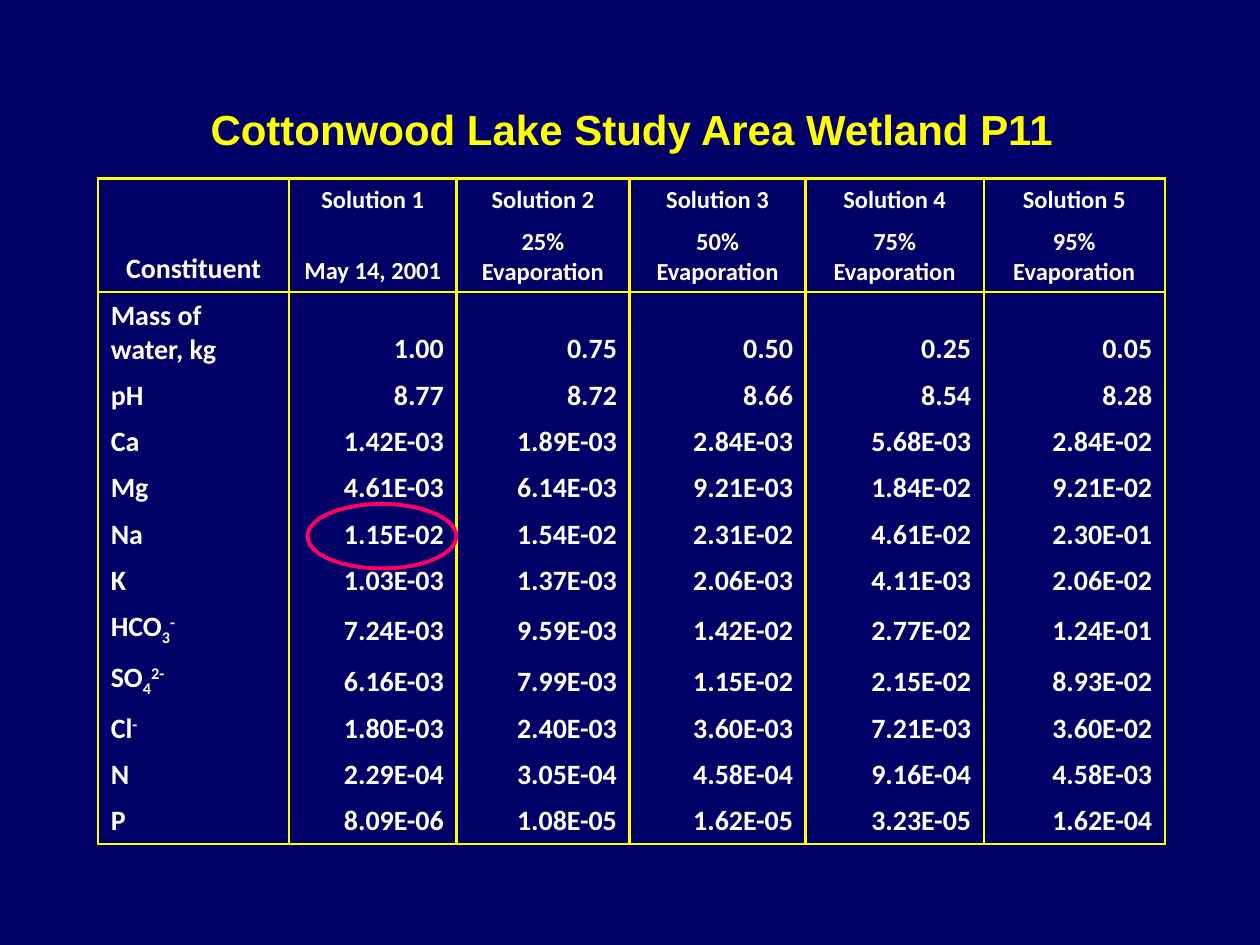
from dataclasses import dataclass

from lxml import etree
from pptx import Presentation
from pptx.dml.color import RGBColor
from pptx.enum.shapes import MSO_SHAPE
from pptx.enum.text import MSO_ANCHOR, MSO_AUTO_SIZE, PP_ALIGN
from pptx.oxml.ns import qn
from pptx.util import Cm, Pt

LEFT, CENTER, RIGHT = PP_ALIGN.LEFT, PP_ALIGN.CENTER, PP_ALIGN.RIGHT
TOP, BOTTOM = MSO_ANCHOR.TOP, MSO_ANCHOR.BOTTOM
FIT_SHAPE = MSO_AUTO_SIZE.SHAPE_TO_FIT_TEXT
OVAL = MSO_SHAPE.OVAL
TITLE_ONLY = 5
SUB, SUPER = -25000, 30000


@dataclass(frozen=True)
class Theme:
    background: str = "000066"
    accent: str = "FFFF00"
    text: str = "FFFFFF"
    highlight: str = "FF0066"
    title_font: str = "Arial"
    table_font: str = "Calibri"
    title_size: int = 24
    heading_size: int = 14
    body_size: int = 16
    frame_line: float = 1.5
    header_line: float = 1
    highlight_line: float = 2.25


THEME = Theme()

SOLUTIONS = ["Solution 1", "Solution 2", "Solution 3", "Solution 4", "Solution 5"]
CONDITIONS = ["May 14, 2001"] + [f"{share}% Evaporation" for share in (25, 50, 75, 95)]

# Each constituent is a list of (text, baseline) runs, followed by its values
MEASUREMENTS = [
    ([("Mass of water, kg", 0)], "1.00 0.75 0.50 0.25 0.05"),
    ([("pH", 0)], "8.77 8.72 8.66 8.54 8.28"),
    ([("Ca", 0)], "1.42E-03 1.89E-03 2.84E-03 5.68E-03 2.84E-02"),
    ([("Mg", 0)], "4.61E-03 6.14E-03 9.21E-03 1.84E-02 9.21E-02"),
    ([("Na", 0)], "1.15E-02 1.54E-02 2.31E-02 4.61E-02 2.30E-01"),
    ([("K", 0)], "1.03E-03 1.37E-03 2.06E-03 4.11E-03 2.06E-02"),
    ([("HCO", 0), ("3", SUB), ("-", SUPER)],
     "7.24E-03 9.59E-03 1.42E-02 2.77E-02 1.24E-01"),
    ([("SO", 0), ("4", SUB), ("2-", SUPER)],
     "6.16E-03 7.99E-03 1.15E-02 2.15E-02 8.93E-02"),
    ([("Cl", 0), ("-", SUPER)], "1.80E-03 2.40E-03 3.60E-03 7.21E-03 3.60E-02"),
    ([("N", 0)], "2.29E-04 3.05E-04 4.58E-04 9.16E-04 4.58E-03"),
    ([("P", 0)], "8.09E-06 1.08E-05 1.62E-05 3.23E-05 1.62E-04"),
]

COLUMN_WIDTHS = [3.85, 3.37, 3.49, 3.55, 3.59, 3.65]
ROW_HEIGHTS = [0.85, 1.43, 1.62] + [0.93] * 5 + [1.02] * 2 + [0.93] * 3
HEADER_ROWS = 2


def rgb(color):
    return RGBColor.from_string(color)


def add_run(paragraph, text, size, font, color, baseline=0):
    run = paragraph.add_run()
    run.text = text
    run.font.size = Pt(size)
    run.font.name = font
    run.font.bold = True
    run.font.color.rgb = rgb(color)
    if baseline:
        run._r.get_or_add_rPr().set("baseline", str(baseline))


def set_border(cell, side, width):
    """Draw one cell edge, or hide it when the width is zero."""
    edge = etree.SubElement(cell._tc.get_or_add_tcPr(), qn(f"a:ln{side}"))
    if width:
        edge.set("w", str(Pt(width)))
        fill = etree.SubElement(edge, qn("a:solidFill"))
        etree.SubElement(fill, qn("a:srgbClr"), val=THEME.accent)
    else:
        etree.SubElement(edge, qn("a:noFill"))


def rule_width(boundary):
    """Width of the horizontal rule above the row with this index."""
    if boundary in (0, len(ROW_HEIGHTS)):
        return THEME.frame_line
    return THEME.header_line if boundary == HEADER_ROWS else 0


def style_cell(cell, row):
    lower = HEADER_ROWS if cell.is_merge_origin else row + 1
    set_border(cell, "L", THEME.frame_line)
    set_border(cell, "R", THEME.frame_line)
    set_border(cell, "T", rule_width(row))
    set_border(cell, "B", rule_width(lower))
    cell.fill.background()
    cell.vertical_anchor = BOTTOM


def write_cell(cell, runs, size, alignment):
    paragraph = cell.text_frame.paragraphs[0]
    paragraph.alignment = alignment
    for text, baseline in runs:
        add_run(paragraph, text, size, THEME.table_font, THEME.text, baseline)


def add_title(slide, text):
    title = slide.shapes.title
    title.left, title.top, title.width, title.height = Cm(3.99), Cm(1.96), Cm(17.58), Cm(1.27)
    frame = title.text_frame
    frame.word_wrap = False
    frame.auto_size = FIT_SHAPE
    frame.vertical_anchor = TOP
    paragraph = frame.paragraphs[0]
    paragraph.alignment = LEFT
    add_run(paragraph, text, THEME.title_size, THEME.title_font, THEME.accent)


def add_chemistry_table(slide):
    chemistry = slide.shapes.add_table(
        len(ROW_HEIGHTS), len(COLUMN_WIDTHS), Cm(1.98), Cm(3.6),
        Cm(sum(COLUMN_WIDTHS)), Cm(sum(ROW_HEIGHTS))).table
    chemistry.first_row = False
    chemistry.horz_banding = False
    for column, width in zip(chemistry.columns, COLUMN_WIDTHS):
        column.width = Cm(width)
    for row, height in zip(chemistry.rows, ROW_HEIGHTS):
        row.height = Cm(height)

    # Borders and fills
    chemistry.cell(0, 0).merge(chemistry.cell(HEADER_ROWS - 1, 0))
    for index, row in enumerate(chemistry.rows):
        for cell in row.cells:
            style_cell(cell, index)

    # Headings
    write_cell(chemistry.cell(0, 0), [("Constituent", 0)], THEME.body_size, CENTER)
    for row, headings in enumerate((SOLUTIONS, CONDITIONS)):
        for column, heading in enumerate(headings, 1):
            write_cell(chemistry.cell(row, column), [(heading, 0)],
                       THEME.heading_size, CENTER)

    # Measurements
    for row, (constituent, values) in enumerate(MEASUREMENTS, HEADER_ROWS):
        write_cell(chemistry.cell(row, 0), constituent, THEME.body_size, LEFT)
        for column, value in enumerate(values.split(), 1):
            write_cell(chemistry.cell(row, column), [(value, 0)], THEME.body_size, RIGHT)


def add_highlight(slide):
    ring = slide.shapes.add_shape(OVAL, Cm(6.2), Cm(10.16), Cm(3), Cm(1.3))
    ring.shadow.inherit = False
    ring.fill.background()
    ring.line.color.rgb = rgb(THEME.highlight)
    ring.line.width = Pt(THEME.highlight_line)


def main():
    presentation = Presentation()
    presentation.slide_width, presentation.slide_height = Cm(25.4), Cm(19.05)
    slide = presentation.slides.add_slide(presentation.slide_layouts[TITLE_ONLY])
    slide.background.fill.solid()
    slide.background.fill.fore_color.rgb = rgb(THEME.background)

    add_chemistry_table(slide)
    add_title(slide, "Cottonwood Lake Study Area Wetland P11")
    add_highlight(slide)
    presentation.save("out.pptx")


if __name__ == "__main__":
    main()
